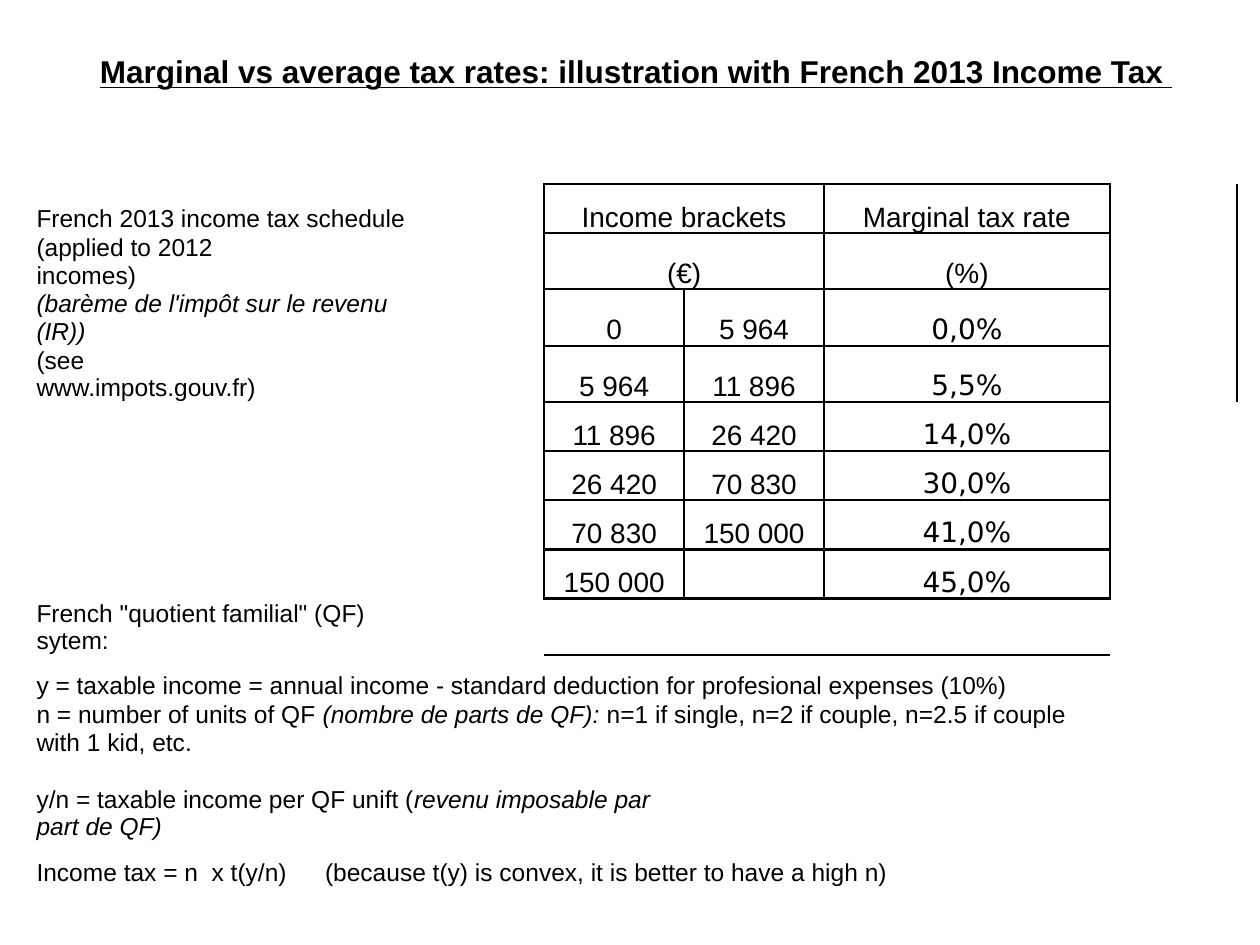
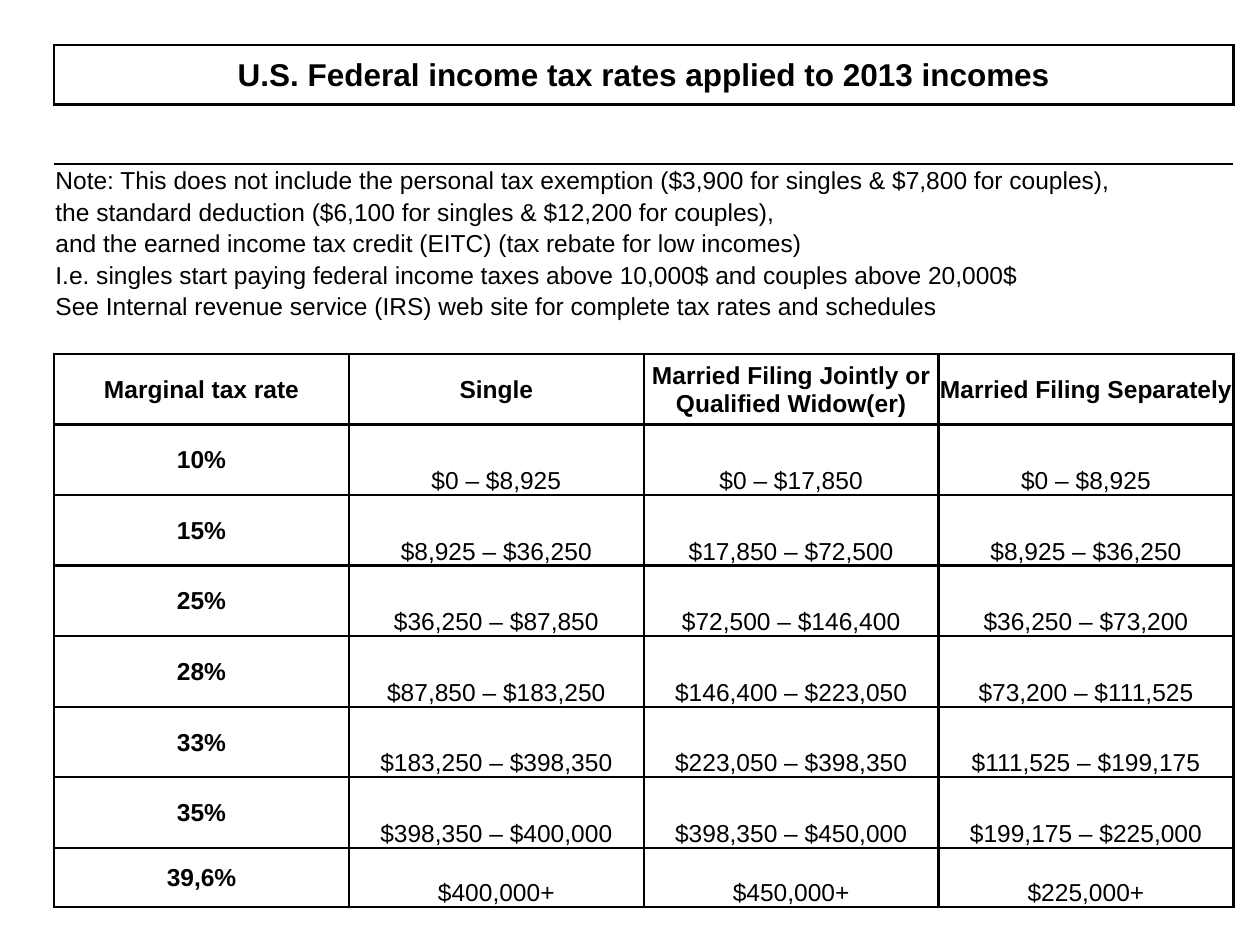
import itertools

import pptx
import pptx.dml.color
import pptx.enum.text
import pptx.util
from lxml import etree
from pptx.oxml.ns import qn

Inches = pptx.util.Inches
CENTER = pptx.enum.text.PP_ALIGN.CENTER
LEFT = pptx.enum.text.PP_ALIGN.LEFT
MIDDLE = pptx.enum.text.MSO_ANCHOR.MIDDLE
BOTTOM = pptx.enum.text.MSO_ANCHOR.BOTTOM

COLORS = {"ink": "000000", "paper": "FFFFFF"}
PLAIN_STYLE = "{2D5ABB26-0587-4C30-8999-92F81FD0307C}"
BORDER_PT = 1.5
SIDES = {"lnL": (0, -1), "lnR": (0, 1), "lnT": (-1, 0), "lnB": (1, 0)}

TITLE = {"size": 18, "bold": True}
BODY = {"size": 14}
ITALIC = {"italic": True}
BRACKET = {"size": 16}
RATE = {"size": 16, "name": "DejaVu Sans"}
HEADING = {"size": 14, "bold": True}

FRENCH_COLS = [1.01] * 4 + [1.11] * 2 + [2.27, 1.01]
FRENCH_ROWS = [0.36, 0.36, 0.38, 0.39, 0.44, 0.44, 0.44, 0.39,
               0.39, 0.39, 0.39, 0.44, 0.36, 0.44, 0.67, 0.36]
FRENCH_TITLE = "Marginal vs average tax rates: illustration with French 2013 Income Tax "
# row, first column, columns spanned, runs
FRENCH_NOTES = [
    (3, 0, 3, [("French 2013 income tax schedule", {})]),
    (4, 0, 2, [("(applied to 2012 incomes)", {})]),
    (5, 0, 3, [("(barème de l'impôt sur le revenu (IR))", ITALIC)]),
    (6, 0, 2, [("(see www.impots.gouv.fr)", {})]),
    (11, 0, 3, [('French "quotient familial" (QF) sytem:', {})]),
    (12, 0, 7, [("y = taxable income = annual income - standard deduction "
                 "for profesional expenses (10%)", {})]),
    (13, 0, 7, [("n = number of units of QF ", {}),
                ("(nombre de parts de QF): ", ITALIC),
                ("n=1 if single, n=2 if couple, n=2.5 if couple with 1 kid, etc.", {})]),
    (14, 0, 5, [("y/n = taxable income per QF unift (", {}),
                ("revenu imposable par part de QF)", ITALIC)]),
    (15, 0, 2, [("Income tax = n  x t(y/n)", {})]),
]
CONVEXITY_NOTE = "(because t(y) is convex, it is better to have a high n)"
FRENCH_HEADINGS = [("Income brackets", "Marginal tax rate"), ("(€)", "(%)")]
FRENCH_LIMITS = ["0", "5 964", "11 896", "26 420", "70 830", "150 000", ""]
FRENCH_RATES = ["0,0%", "5,5%", "14,0%", "30,0%", "41,0%", "45,0%"]

US_COLS = [2.34] * 4
US_ROWS = [0.47, 0.47] + [0.25] * 5 + [0.26] + [0.56] * 7 + [0.47]
US_TITLE = "U.S. Federal income tax rates applied to 2013 incomes"
# text, columns spanned
US_NOTES = [
    ("Note: This does not include the personal tax exemption "
     "($3,900 for singles & $7,800 for couples),", 4),
    ("the standard deduction ($6,100 for singles & $12,200 for couples),", 3),
    ("and the earned income tax credit (EITC) (tax rebate for low incomes)", 3),
    ("I.e. singles start paying federal income taxes above 10,000$ "
     "and couples above 20,000$", 4),
    ("See Internal revenue service (IRS) web site for complete tax rates and schedules", 4),
]
US_HEADINGS = ["Marginal tax rate", "Single",
               "Married Filing Jointly or Qualified Widow(er)", "Married Filing Separately"]
US_BRACKETS = [
    ("10%", "$0 – $8,925", "$0 – $17,850", "$0 – $8,925"),
    ("15%", "$8,925 – $36,250", "$17,850 – $72,500", "$8,925 – $36,250"),
    ("25%", "$36,250 – $87,850", "$72,500 – $146,400", "$36,250 – $73,200"),
    ("28%", "$87,850 – $183,250", "$146,400 – $223,050", "$73,200 – $111,525"),
    ("33%", "$183,250 – $398,350", "$223,050 – $398,350", "$111,525 – $199,175"),
    ("35%", "$398,350 – $400,000", "$398,350 – $450,000", "$199,175 – $225,000"),
    ("39,6%", "$400,000+", "$450,000+", "$225,000+"),
]


def add_border(cell, side):
    tc_pr = cell._tc.get_or_add_tcPr()
    ln = etree.SubElement(tc_pr, qn("a:" + side), w=str(pptx.util.Pt(BORDER_PT)))
    fill = etree.SubElement(ln, qn("a:solidFill"))
    etree.SubElement(fill, qn("a:srgbClr"), val=COLORS["ink"])


def add_grid(slide, left, top, cols, rows, boxed):
    """Add an unfilled table whose cells in boxed, (row, column) pairs, are ruled."""
    frame = slide.shapes.add_table(len(rows), len(cols), Inches(left), Inches(top),
                                   Inches(sum(cols)), Inches(sum(rows)))
    table = frame.table
    table.first_row = table.horz_banding = False
    table._tbl.tblPr.find(qn("a:tableStyleId")).text = PLAIN_STYLE
    for column, width in zip(table.columns, cols):
        column.width = Inches(width)
    for row, height in zip(table.rows, rows):
        row.height = Inches(height)

    margins = {"margin_left": 0.01, "margin_right": 0.01, "margin_top": 0.01, "margin_bottom": 0}
    for r, c in itertools.product(range(len(rows)), range(len(cols))):
        cell = table.cell(r, c)
        for name, value in margins.items():
            setattr(cell, name, Inches(value))
        for side, (dr, dc) in SIDES.items():
            if (r, c) in boxed or (r + dr, c + dc) in boxed:
                add_border(cell, side)
        cell.fill.background()
        # A small end mark keeps an empty cell from stretching its row
        etree.SubElement(cell.text_frame.paragraphs[0]._p, qn("a:endParaRPr"), sz="1000")
    return table


def write(table, r, c, runs, style, span=1, align=CENTER, anchor=BOTTOM):
    """Fill a cell with a string or (text, format) runs, merged over span columns."""
    cell = table.cell(r, c)
    if span > 1:
        cell.merge(table.cell(r, c + span - 1))
    cell.vertical_anchor = anchor
    p = cell.text_frame.paragraphs[0]
    p.alignment = align
    if isinstance(runs, str):
        runs = [(runs, {})]
    for text, extra in runs:
        run = p.add_run()
        run.text = text
        values = {"name": "Arial", "bold": False, **style, **extra}
        values["size"] = pptx.util.Pt(values["size"])
        for name, value in values.items():
            setattr(run.font, name, value)
        run.font.color.rgb = pptx.dml.color.RGBColor.from_string(COLORS["ink"])
    return cell


def add_slide(prs):
    s = prs.slides.add_slide(prs.slide_layouts[6])
    s.background.fill.solid()
    s.background.fill.fore_color.rgb = pptx.dml.color.RGBColor.from_string(COLORS["paper"])
    return s


def build_french_slide(prs):
    boxed = set(itertools.product(range(3, 11), range(4, 7)))
    table = add_grid(add_slide(prs), 0.28, 0.36, FRENCH_COLS, FRENCH_ROWS, boxed)
    write(table, 0, 0, FRENCH_TITLE, {**TITLE, "underline": True}, span=8)
    for r, c, span, runs in FRENCH_NOTES:
        write(table, r, c, runs, BODY, span, LEFT)
    convexity = write(table, 15, 2, CONVEXITY_NOTE, BODY, 5, LEFT)
    convexity.margin_left = Inches(0.28)

    for r, (bracket, rate) in enumerate(FRENCH_HEADINGS, 3):
        write(table, r, 4, bracket, BRACKET, span=2)
        write(table, r, 6, rate, BRACKET)
    brackets = zip(FRENCH_LIMITS, FRENCH_LIMITS[1:], FRENCH_RATES)
    for r, (low, high, rate) in enumerate(brackets, 5):
        write(table, r, 4, low, BRACKET)
        if high:
            write(table, r, 5, high, BRACKET)
        write(table, r, 6, rate, RATE)


def build_us_slide(prs):
    boxed = set(itertools.product([0, *range(8, 16)], range(4)))
    table = add_grid(add_slide(prs), 0.43, 0.36, US_COLS, US_ROWS, boxed)
    write(table, 0, 0, US_TITLE, TITLE, span=4, anchor=MIDDLE)
    for r, (note, span) in enumerate(US_NOTES, 2):
        write(table, r, 0, note, BODY, span, LEFT)
    for c, heading in enumerate(US_HEADINGS):
        write(table, 8, c, heading, HEADING, anchor=MIDDLE)
    for r, (rate, *incomes) in enumerate(US_BRACKETS, 9):
        write(table, r, 0, rate, HEADING, anchor=MIDDLE)
        for c, income in enumerate(incomes, 1):
            write(table, r, c, income, BODY)


def main():
    prs = pptx.Presentation()
    prs.slide_width, prs.slide_height = Inches(10), Inches(7.5)
    build_french_slide(prs)
    build_us_slide(prs)
    prs.save("out.pptx")


if __name__ == "__main__":
    main()
